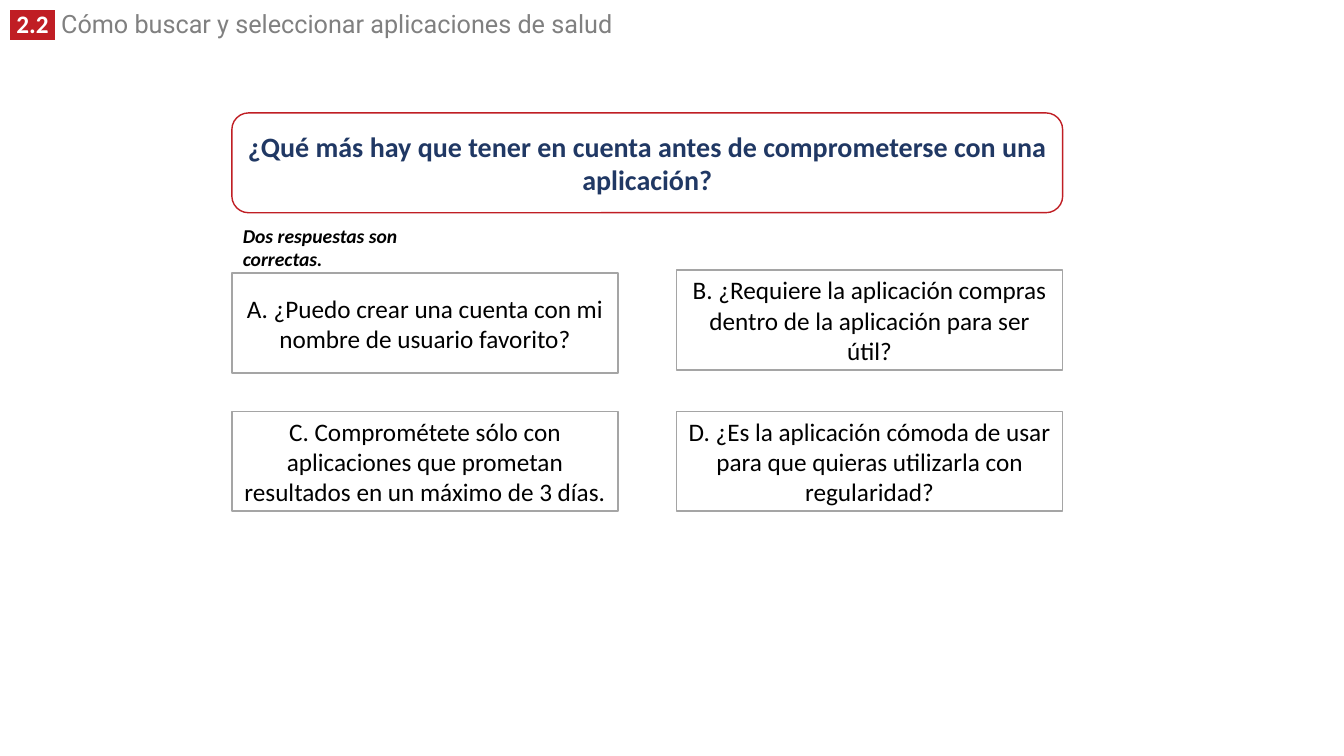
"""Build the quiz slide on choosing health applications."""
import pptx
import pptx.dml.color
import pptx.enum.shapes
import pptx.enum.text
import pptx.oxml
import pptx.oxml.ns
import pptx.util

COLORS = {"red": "C01E24", "navy": "203864", "gray": "808080",
          "border": "A5A5A5", "white": "FFFFFF", "black": "000000"}
TITLE = [(" ", "Roboto", True), ("2.2", "Calibri", True), (" ", "Roboto", True),
         (" Cómo buscar y seleccionar aplicaciones de salud", "Roboto", False)]
QUESTION = "¿Qué más hay que tener en cuenta antes de comprometerse con una aplicación?"
HINT = "Dos respuestas son correctas."
ANSWERS = [
    ("A. ¿Puedo crear una cuenta con mi nombre de usuario favorito?", 0, 2.71),
    ("B. ¿Requiere la aplicación compras dentro de la aplicación para ser útil?", 1, 2.68),
    ("C. Comprométete sólo con aplicaciones que prometan resultados en un máximo de 3 días.", 0, 4.08),
    ("D. ¿Es la aplicación cómoda de usar para que quieras utilizarla con regularidad?", 1, 4.08),
]
LEFT, FULL_WIDTH, ANSWER_WIDTH, BOX_HEIGHT = 2.3, 8.24, 3.83, 0.99
COLUMN_STEP = FULL_WIDTH - ANSWER_WIDTH
SHAPES = pptx.enum.shapes.MSO_SHAPE
ANCHORS = pptx.enum.text.MSO_ANCHOR
ALIGNS = pptx.enum.text.PP_ALIGN


def rgb(name):
    return pptx.dml.color.RGBColor.from_string(COLORS[name])


def inches(*lengths):
    return [pptx.util.Inches(length) for length in lengths]


def add_span(para, text, color, size, name="Calibri", **formats):
    span = para.add_run()
    span.text = text
    span.font.color.rgb = rgb(color)
    formats.update(size=pptx.util.Pt(size), name=name)
    for key, value in formats.items():
        setattr(span.font, key, value)
    return span


def highlight(span, color):
    properties = span.font._element
    mark = pptx.oxml.parse_xml(
        f'<a:highlight {pptx.oxml.ns.nsdecls("a")}><a:srgbClr val="{COLORS[color]}"/></a:highlight>')
    properties.find(pptx.oxml.ns.qn("a:solidFill")).addnext(mark)


def add_box(page, kind, area, text, border, color, size, bold=False):
    box = page.shapes.add_shape(kind, *inches(*area))
    box.shadow.inherit = False
    box.fill.solid()
    box.fill.fore_color.rgb = rgb("white")
    box.line.color.rgb = rgb(border)
    box.line.width = pptx.util.Pt(1)
    box.text_frame.word_wrap = True
    box.text_frame.vertical_anchor = ANCHORS.MIDDLE
    para = box.text_frame.paragraphs[0]
    para.alignment = ALIGNS.CENTER
    add_span(para, text, color, size, bold=bold)


def add_title(page):
    title = page.shapes.title
    title.left, title.top, title.width, title.height = inches(0, 0.09, 9.52, 0.35)
    frame = title.text_frame
    frame.word_wrap = True
    frame.vertical_anchor = ANCHORS.TOP
    frame.auto_size = pptx.enum.text.MSO_AUTO_SIZE.NONE
    para = frame.paragraphs[0]
    para.alignment = ALIGNS.LEFT
    para.line_spacing = 0.8
    for text, name, badge in TITLE:
        span = add_span(para, text, "white" if badge else "gray", 18, name, bold=badge)
        if badge:
            highlight(span, "red")


def add_hint(page):
    frame = page.shapes.add_textbox(*inches(2.31, 2.17, 2.24, 0.34)).text_frame
    frame.word_wrap = True
    add_span(frame.paragraphs[0], HINT, "black", 14, bold=True, italic=True)


def main():
    deck = pptx.Presentation()
    deck.slide_width, deck.slide_height = inches(13.33, 7.5)
    page = deck.slides.add_slide(deck.slide_layouts.get_by_name("Title Only"))
    add_title(page)
    add_box(page, SHAPES.ROUNDED_RECTANGLE, (LEFT, 1.12, FULL_WIDTH, BOX_HEIGHT),
            QUESTION, "red", "navy", 20, True)
    add_hint(page)
    for text, column, top in ANSWERS:
        area = (LEFT + column * COLUMN_STEP, top, ANSWER_WIDTH, BOX_HEIGHT)
        add_box(page, SHAPES.RECTANGLE, area, text, "border", "black", 18)
    deck.save("out.pptx")


if __name__ == "__main__":
    main()
